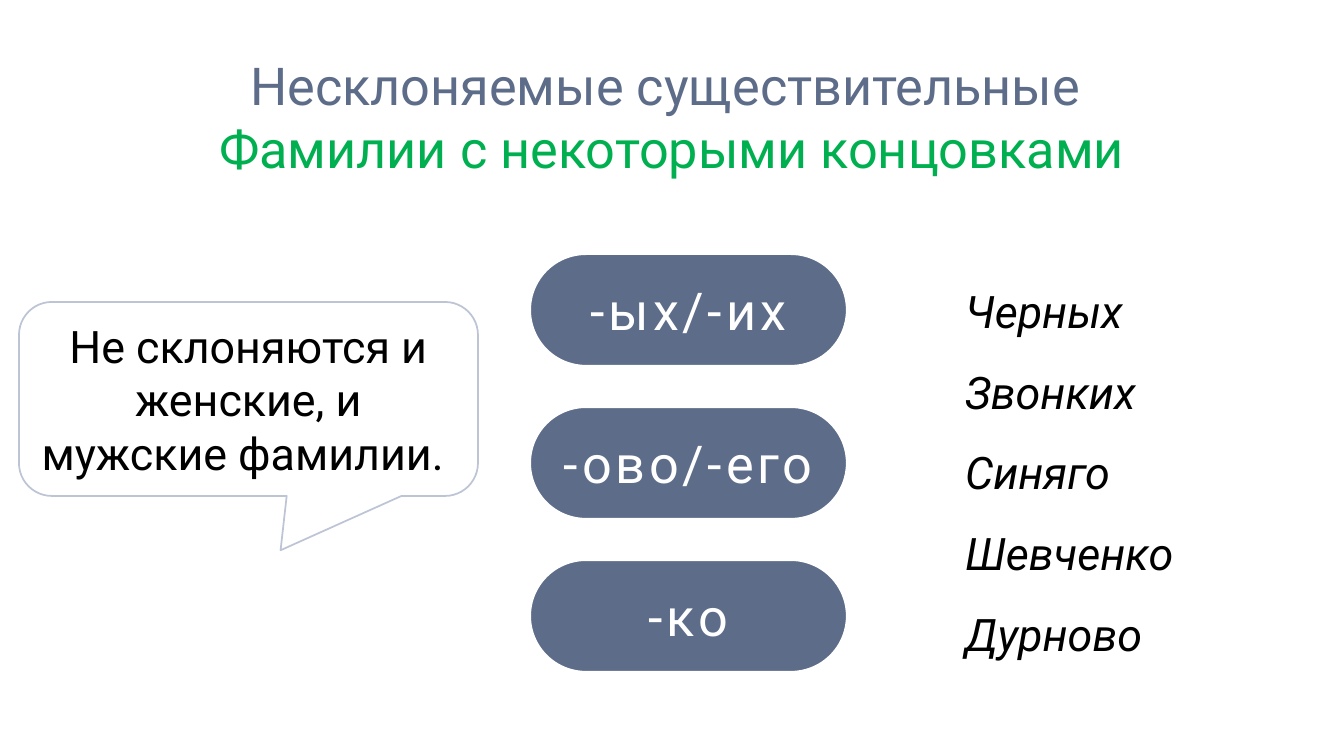
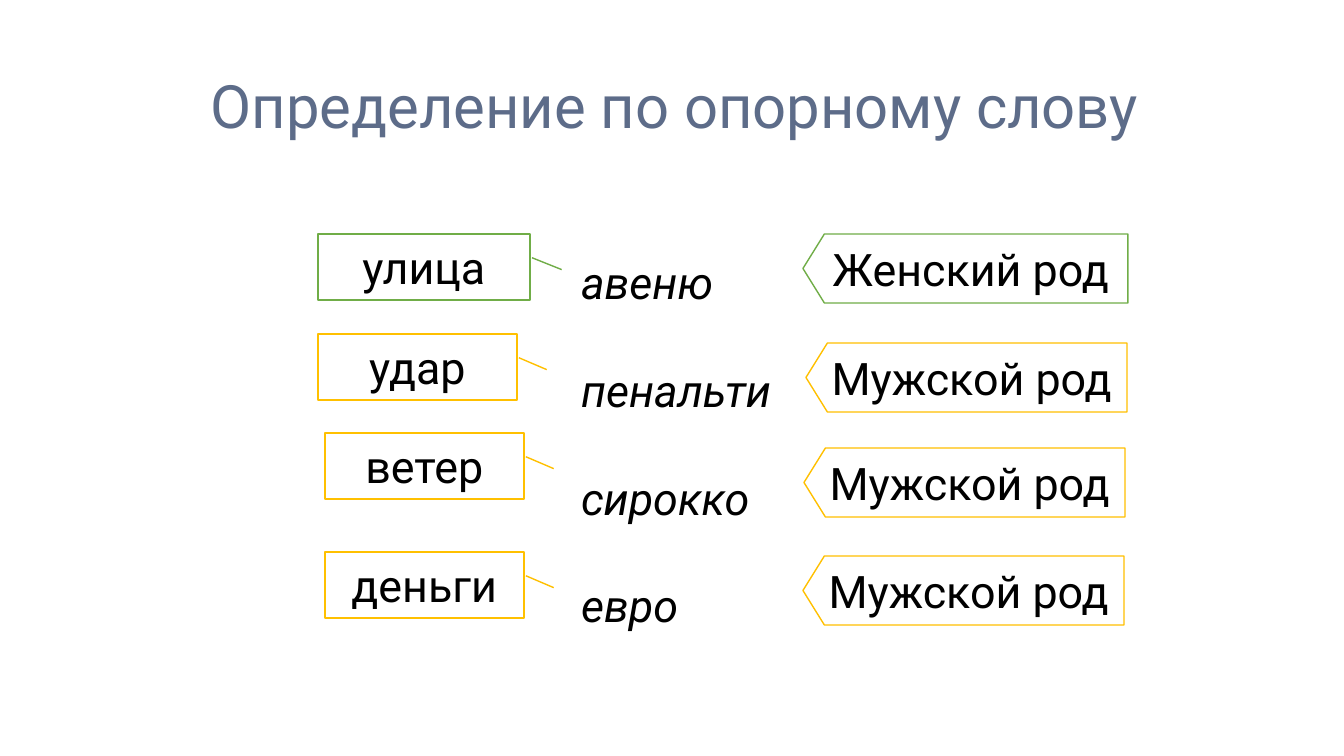
from lxml.etree import SubElement
from pptx import Presentation
from pptx.dml.color import RGBColor
from pptx.enum.shapes import MSO_SHAPE as Kind
from pptx.enum.text import MSO_ANCHOR as Anchor, MSO_AUTO_SIZE as Fit, PP_ALIGN as Align
from pptx.oxml.ns import qn
from pptx.util import Pt

SCALE = 914400 / 100.8
WIDE, HIGH = 1344, 756
FONT = "Roboto"
SLATE = RGBColor(0x5D, 0x6C, 0x89)
GREEN = RGBColor(0x00, 0xB0, 0x50)
LEAF = RGBColor(0x70, 0xAD, 0x47)
GOLD = RGBColor(0xFF, 0xC0, 0x00)
NAVY = RGBColor(0x00, 0x20, 0x60)
BLACK = RGBColor(0x00, 0x00, 0x00)
WHITE = RGBColor(0xFF, 0xFF, 0xFF)
BODY, LARGE, HUGE = 32, 37.3, 42.7


def px(*nums):
    return [round(n * SCALE) for n in nums]


def write(shape, text, size=BODY, color=BLACK, align=Align.CENTER,
          italic=False, lead=1.0, pad=(10, 5)):
    """Fill the shape with text, one paragraph a line, centred in height."""
    frame = shape.text_frame
    frame.text = text
    frame.word_wrap = True
    frame.auto_size = Fit.NONE
    frame.vertical_anchor = Anchor.MIDDLE
    side, edge = px(*pad)
    frame.margin_left = frame.margin_right = side
    frame.margin_top = frame.margin_bottom = edge
    for para in frame.paragraphs:
        para.alignment = align
        para.line_spacing = lead
        for run in para.runs:
            font = run.font
            font.name, font.size, font.italic = FONT, Pt(size), italic
            font.color.rgb = color


def head(slide, box, text, size):
    title = slide.shapes.title
    title.left, title.top, title.width, title.height = px(*box)
    write(title, text, size, SLATE, pad=(13, 7))
    return title


def column(slide, box, words, lead):
    area = slide.shapes.add_textbox(*px(*box))
    write(area, "\n".join(words), align=Align.LEFT, italic=True,
          lead=lead, pad=(13, 7))


def draw(slide, kind, box, fill, line, width, adjust):
    shape = slide.shapes.add_shape(kind, *px(*box))
    shape.shadow.inherit = False
    shape.fill.solid()
    shape.fill.fore_color.rgb = fill
    shape.line.color.rgb = line
    shape.line.width = Pt(width)
    for i, value in enumerate(adjust):
        shape.adjustments[i] = value
    return shape


def flip(shape):
    shape.element.spPr.find(qn("a:xfrm")).set("flipH", "1")


def pills(slide, box, words, gap):
    """Stack equal rounded labels in the box."""
    left, top, width, height = box
    each = (height - gap * (len(words) - 1)) / len(words)
    for i, word in enumerate(words):
        place = (left, top + i * (each + gap), width, each)
        pill = draw(slide, Kind.ROUNDED_RECTANGLE, place, SLATE, WHITE, 1.5, [0.5])
        write(pill, word, LARGE, WHITE)
        for run in pill.text_frame.paragraphs[0].runs:
            run.font._element.set("spc", "270")


def bubble(slide, box, text):
    shape = draw(slide, Kind.ROUNDED_RECTANGULAR_CALLOUT, box, WHITE, NAVY,
                 1.25, [0.07, 0.78, 0.17])
    write(shape, text)
    tint = shape.line._ln.find(".//" + qn("a:srgbClr"))
    SubElement(tint, qn("a:alpha")).set("val", "25000")


def tag(slide, box, text, color):
    shape = draw(slide, Kind.LINE_CALLOUT_1, box, WHITE, color, 1,
                 [0.54, -0.15, 0.36, -0.01])
    flip(shape)
    write(shape, text, pad=(13, 7))


def plate(slide, box, text, color):
    shape = draw(slide, Kind.PENTAGON, box, WHITE, color, 1, [0.31])
    flip(shape)
    write(shape, text)


def endings(slide):
    title = head(slide, (58, 40, 1228, 152),
                 "Несклоняемые существительные \nФамилии с некоторыми концовками", LARGE)
    title.text_frame.paragraphs[1].runs[0].font.color.rgb = GREEN
    column(slide, (952, 270, 380, 377),
           ["Черных", "Звонких", "Синяго", "Шевченко", "Дурново"], 1.5)
    pills(slide, (530, 254, 317, 418), ["-ых/-их", "-ово/-его", "-ко"], 41)
    bubble(slide, (19, 302, 459, 194), "Не склоняются и женские, и мужские фамилии. ")


def genders(slide):
    head(slide, (148, 66, 1054, 77), "Определение по опорному слову", HUGE)
    column(slide, (568, 228, 271, 377), ["авеню", "пенальти", "сирокко", "евро"], 2)
    male = "Мужской род"
    rows = [
        ("улица", (318, 234, 212), "Женский род", (803, 234, 325), LEAF),
        ("удар", (318, 334, 199), male, (806, 343, 321), GOLD),
        ("ветер", (325, 433, 199), male, (804, 448, 321), GOLD),
        ("деньги", (325, 552, 199), male, (803, 556, 321), GOLD),
    ]
    for word, spot, gender, place, color in rows:
        tag(slide, (*spot, 66), word, color)
        plate(slide, (*place, 69), gender, color)


def main():
    deck = Presentation()
    deck.slide_width, deck.slide_height = px(WIDE, HIGH)
    for build in (endings, genders):
        build(deck.slides.add_slide(deck.slide_layouts[5]))
    deck.save("out.pptx")


if __name__ == "__main__":
    main()
